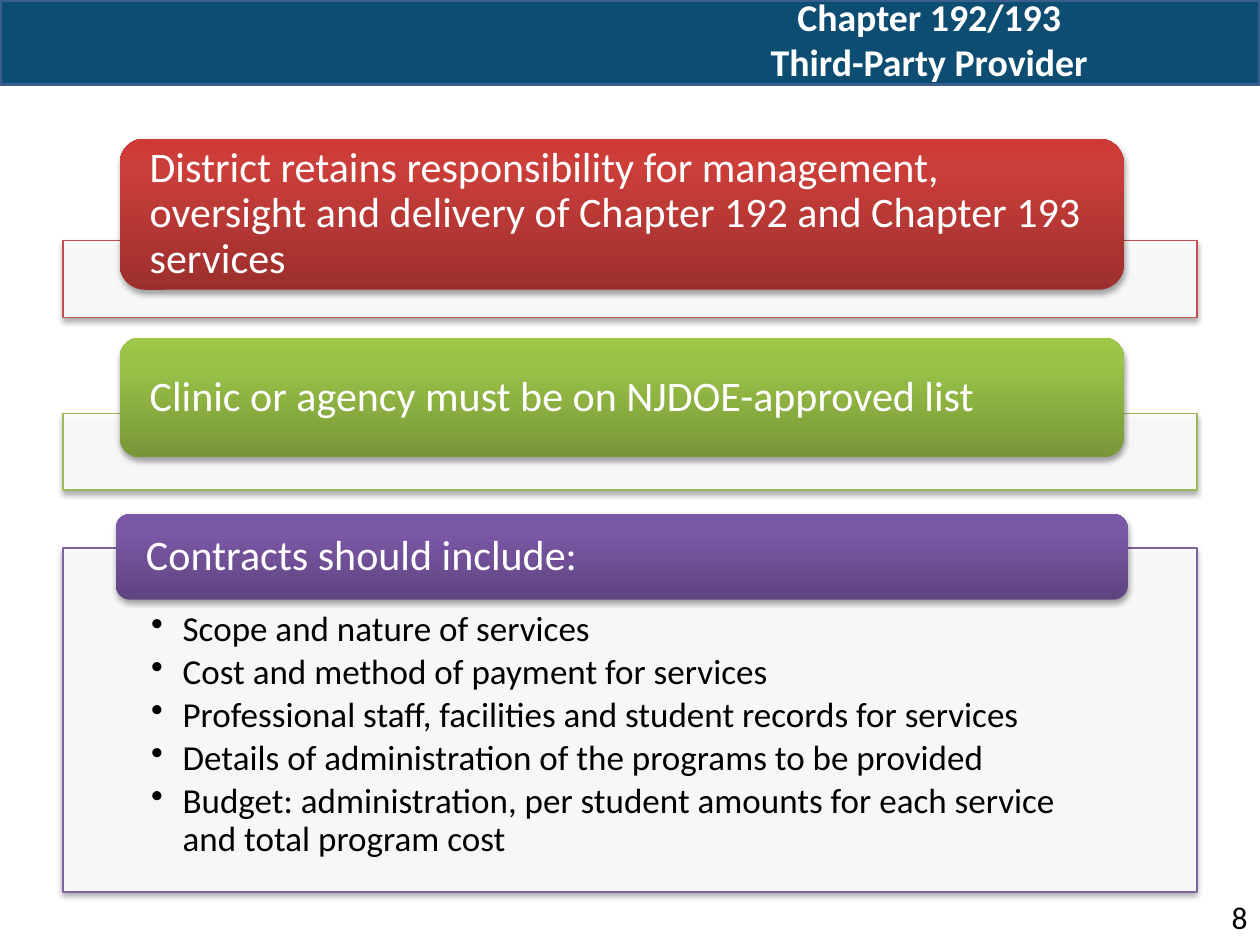
import copy

import pptx
import pptx.dml.color
import pptx.enum.shapes
import pptx.enum.text
import pptx.oxml
import pptx.oxml.ns
import pptx.util
from lxml import etree

RGBColor = pptx.dml.color.RGBColor
Inches, Pt = pptx.util.Inches, pptx.util.Pt
Shape = pptx.enum.shapes.MSO_SHAPE
Align = pptx.enum.text.PP_ALIGN
Anchor = pptx.enum.text.MSO_ANCHOR
qn = pptx.oxml.ns.qn

WHITE = RGBColor(0xFF, 0xFF, 0xFF)
BLACK = RGBColor(0x00, 0x00, 0x00)
BAND_FILL = RGBColor(0x0E, 0x4D, 0x72)
BAND_EDGE = RGBColor(0x3A, 0x5F, 0x8C)
RED = RGBColor(0xC0, 0x50, 0x4D)
RED_SHADES = (RGBColor(0x9C, 0x2F, 0x2D), RGBColor(0xCB, 0x3E, 0x3A),
              RGBColor(0xCE, 0x3B, 0x37))
GREEN = RGBColor(0x9B, 0xBB, 0x59)
GREEN_SHADES = (RGBColor(0x77, 0x97, 0x37), RGBColor(0x9B, 0xC3, 0x48),
                RGBColor(0x9D, 0xC7, 0x46))
PURPLE = RGBColor(0x80, 0x64, 0xA2)
PURPLE_SHADES = (RGBColor(0x5F, 0x44, 0x80), RGBColor(0x7B, 0x58, 0xA6),
                 RGBColor(0x7C, 0x57, 0xA8))

# Grid of 40 columns by 30 rows
WIDTH, HEIGHT = Inches(10), Inches(7.5)
COLUMN, ROW = WIDTH / 40, HEIGHT / 30

# Share of a rounded shape's height by which its text area is inset
CORNER_INSET = 0.05
BAR_MARGIN = 0.24

# Each section: accent, shades, frame rows, bar columns and rows, heading
SECTIONS = [
    (RED, RED_SHADES, (7.64, 2.44), (3.8, 4.4, 31.88, 4.8),
     "District retains responsibility for management, oversight and "
     "delivery of Chapter 192 and Chapter 193 services", []),
    (GREEN, GREEN_SHADES, (13.12, 2.44), (3.8, 10.72, 31.88, 3.8),
     "Clinic or agency must be on NJDOE-approved list", []),
    (PURPLE, PURPLE_SHADES, (17.4, 10.92), (3.68, 16.32, 32.12, 2.72),
     "Contracts should include:",
     ["Scope and nature of services",
      "Cost and method of payment for services",
      "Professional staff, facilities and student records for services",
      "Details of administration of the programs to be provided",
      "Budget: administration, per student amounts for each service "
      "and total program cost"]),
]


def place(left, top, width, height):
    return (round(left * COLUMN), round(top * ROW),
            round(width * COLUMN), round(height * ROW))


def apply(target, values):
    for name, value in values.items():
        setattr(target, name, value)


def set_frame(holder, anchor, margins=None):
    frame = holder.text_frame
    apply(frame, {"word_wrap": True, "vertical_anchor": anchor})
    if margins:
        sides = ("margin_left", "margin_top", "margin_right", "margin_bottom")
        apply(frame, {side: Inches(m) for side, m in zip(sides, margins)})
    return frame


def write(paragraph, text, size, color, bold=False, **layout):
    apply(paragraph, layout)
    for index, line in enumerate(text.split("\n")):
        if index:
            paragraph.add_line_break()
        run = paragraph.add_run()
        run.text = line
        apply(run.font, {"name": "Calibri", "size": Pt(size), "bold": bold})
        run.font.color.rgb = color


def add_shadow(shape):
    shape.shadow.inherit = False
    effects = shape._element.spPr.find(qn("a:effectLst"))
    shadow = etree.SubElement(
        effects, qn("a:outerShdw"), blurRad=str(Pt(3.1)), dist=str(Pt(1.8)),
        dir="5400000", rotWithShape="0")
    tint = etree.SubElement(shadow, qn("a:srgbClr"), val="000000")
    etree.SubElement(tint, qn("a:alpha"), val="35000")


def add_box(slide, kind, area, fill=None, edge=None, edge_width=0.75):
    box = slide.shapes.add_shape(kind, *place(*area))
    box.shadow.inherit = False
    if fill is not None:
        box.fill.solid()
        box.fill.fore_color.rgb = fill
    if edge is None:
        box.line.fill.background()
    else:
        box.line.color.rgb = edge
        box.line.width = Pt(edge_width)
    return box


def add_label(slide, area, text, size, color, align, anchor, bold=False):
    label = slide.shapes.add_textbox(*place(*area))
    frame = set_frame(label, anchor)
    write(frame.paragraphs[0], text, size, color, bold, alignment=align)


def add_section_frame(slide, accent, top, height, items):
    panel = add_box(slide, Shape.RECTANGLE, (2, top, 36, height), WHITE, accent)
    fill_color = panel._element.spPr.find(qn("a:solidFill")).find(qn("a:srgbClr"))
    etree.SubElement(fill_color, qn("a:alpha"), val="90000")
    add_shadow(panel)
    if not items:
        return
    frame = set_frame(panel, Anchor.TOP, (0.7, 0.5, 0.7, 0.16))
    for index, item in enumerate(items):
        paragraph = frame.add_paragraph() if index else frame.paragraphs[0]
        properties = paragraph._p.get_or_add_pPr()
        properties.set("marL", str(Inches(0.25)))
        properties.set("indent", str(-Inches(0.25)))
        etree.SubElement(properties, qn("a:buChar"), char="•")
        write(paragraph, item, 20, BLACK, alignment=Align.LEFT,
              line_spacing=0.9, space_after=Pt(3))


def add_heading_bar(slide, area, shades, heading):
    bar = add_box(slide, Shape.ROUNDED_RECTANGLE, area)
    # Three-stop gradient, dark at the bottom
    bar.fill.gradient()
    stops = bar._element.spPr.find(qn("a:gradFill")).find(qn("a:gsLst"))
    stops.append(copy.deepcopy(stops[-1]))
    for stop, shade, position in zip(bar.fill.gradient_stops, shades, (0, 0.8, 1)):
        stop.color.rgb = shade
        stop.position = position
    bar.fill.gradient_angle = 90
    add_shadow(bar)
    side = BAR_MARGIN - CORNER_INSET * bar.height / Inches(1)
    frame = set_frame(bar, Anchor.MIDDLE, (side, 0, side, 0))
    write(frame.paragraphs[0], heading, 24, WHITE,
          alignment=Align.LEFT, line_spacing=0.9)


def main():
    deck = pptx.Presentation()
    apply(deck, {"slide_width": WIDTH, "slide_height": HEIGHT})
    slide = deck.slides.add_slide(deck.slide_layouts[6])

    # Title band and page number
    add_box(slide, Shape.RECTANGLE, (0, 0, 40, 2.68), BAND_FILL, BAND_EDGE, 2)
    add_label(slide, (37.32, 28.32, 2.68, 1.6), "8", 18, BLACK,
              Align.RIGHT, Anchor.TOP)
    add_label(slide, (19, 0, 21, 2.48), "Chapter 192/193\nThird-Party Provider",
              21.6, WHITE, Align.CENTER, Anchor.MIDDLE, bold=True)

    # Sections: a frame with its heading bar on top
    for accent, shades, (top, height), bar_area, heading, items in SECTIONS:
        add_section_frame(slide, accent, top, height, items)
        add_heading_bar(slide, bar_area, shades, heading)

    deck.save("out.pptx")


if __name__ == "__main__":
    main()
